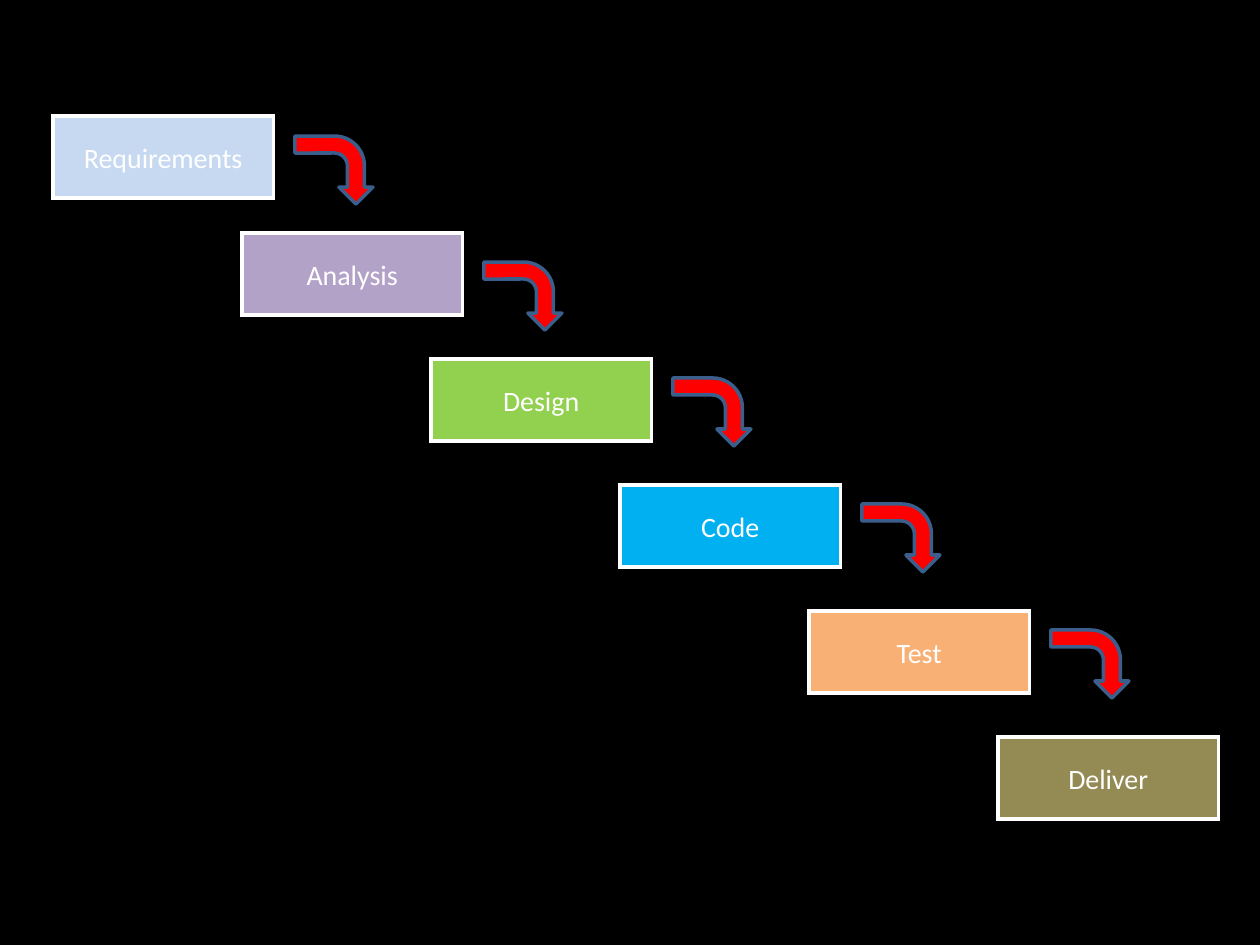
from lxml.etree import SubElement
from pptx import Presentation
from pptx.dml.color import RGBColor
from pptx.enum.shapes import MSO_SHAPE
from pptx.enum.text import MSO_ANCHOR, PP_ALIGN
from pptx.oxml.ns import qn
from pptx.util import Pt

BLACK = RGBColor(0x00, 0x00, 0x00)
WHITE = RGBColor(0xFF, 0xFF, 0xFF)
RED = RGBColor(0xFF, 0x00, 0x00)
STEEL = RGBColor(0x3A, 0x5F, 0x8C)
PALE_BLUE = RGBColor(0xC6, 0xD9, 0xF1)
PURPLE = RGBColor(0xB3, 0xA2, 0xC7)
GREEN = RGBColor(0x92, 0xD0, 0x50)
BLUE = RGBColor(0x00, 0xB0, 0xF0)
ORANGE = RGBColor(0xF9, 0xB0, 0x74)
OLIVE = RGBColor(0x94, 0x8A, 0x54)

# Phase name, fill, top of its box, top of the arrow that leaves it
PHASES = [
    ("Requirements", PALE_BLUE, 66.24, 74.88),
    ("Analysis", PURPLE, 133.2, 146.88),
    ("Design", GREEN, 205.2, 213.12),
    ("Code", BLUE, 277.2, 285.12),
    ("Test", ORANGE, 349.2, 357.12),
    ("Deliver", OLIVE, 421.2, None),
]
STEP = 108
BOX_LEFT, BOX_SIZE = 30.24, (126, 46.8)
ARROW_LEFT, ARROW_SIZE = 171.36, (38.88, 44.64)


def apply(target, formats):
    for name, value in formats.items():
        setattr(target, name, value)


class SlideBuilder:
    font = {"name": "Calibri", "size": Pt(16)}
    frame = {"margin_left": 0, "margin_top": 0, "margin_right": 0,
             "margin_bottom": 0, "vertical_anchor": MSO_ANCHOR.MIDDLE,
             "word_wrap": True}
    line_width = Pt(2)

    def __init__(self, page, background):
        self.page = page
        page.background.fill.solid()
        page.background.fill.fore_color.rgb = background

    def shape(self, kind, left, top, size, fill, line):
        shape = self.page.shapes.add_shape(
            kind, *(Pt(length) for length in (left, top, *size)))
        shape.shadow.inherit = False
        shape.fill.solid()
        shape.fill.fore_color.rgb = fill
        shape.line.color.rgb = line
        shape.line.width = self.line_width
        return shape

    def box(self, text, left, top, fill):
        box = self.shape(MSO_SHAPE.RECTANGLE, left, top, BOX_SIZE, fill, WHITE)
        outline = box.element.spPr.find(qn("a:ln"))
        SubElement(outline, qn("a:miter"), lim="800000")
        apply(box.text_frame, self.frame)
        para = box.text_frame.paragraphs[0]
        para.alignment = PP_ALIGN.CENTER
        span = para.add_run()
        span.text = text
        apply(span.font, self.font)
        span.font.color.rgb = WHITE

    def bent_arrow(self, left, top):
        arrow = self.shape(MSO_SHAPE.BENT_ARROW, left, top, ARROW_SIZE, RED, STEEL)
        arrow.rotation = 90
        for index, value in enumerate((0.25, 0.25, 0.25, 0.44)):
            arrow.adjustments[index] = value


def main():
    deck = Presentation()
    apply(deck, {"slide_width": Pt(720), "slide_height": Pt(540)})
    builder = SlideBuilder(deck.slides.add_slide(deck.slide_layouts[6]), BLACK)
    for index, (name, fill, box_top, arrow_top) in enumerate(PHASES):
        builder.box(name, BOX_LEFT + index * STEP, box_top, fill)
        if arrow_top is not None:
            builder.bent_arrow(ARROW_LEFT + index * STEP, arrow_top)
    deck.save("out.pptx")


if __name__ == "__main__":
    main()
